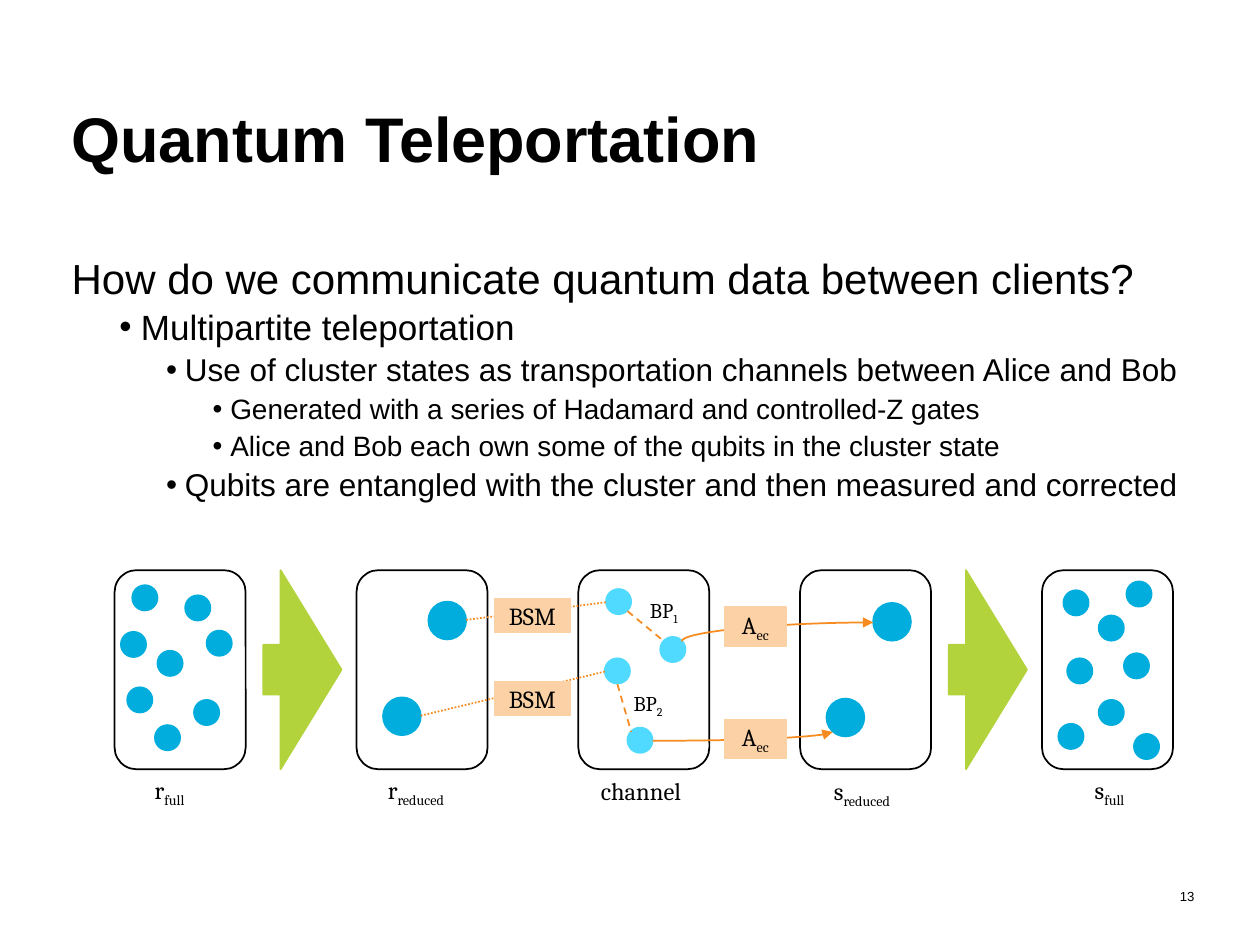
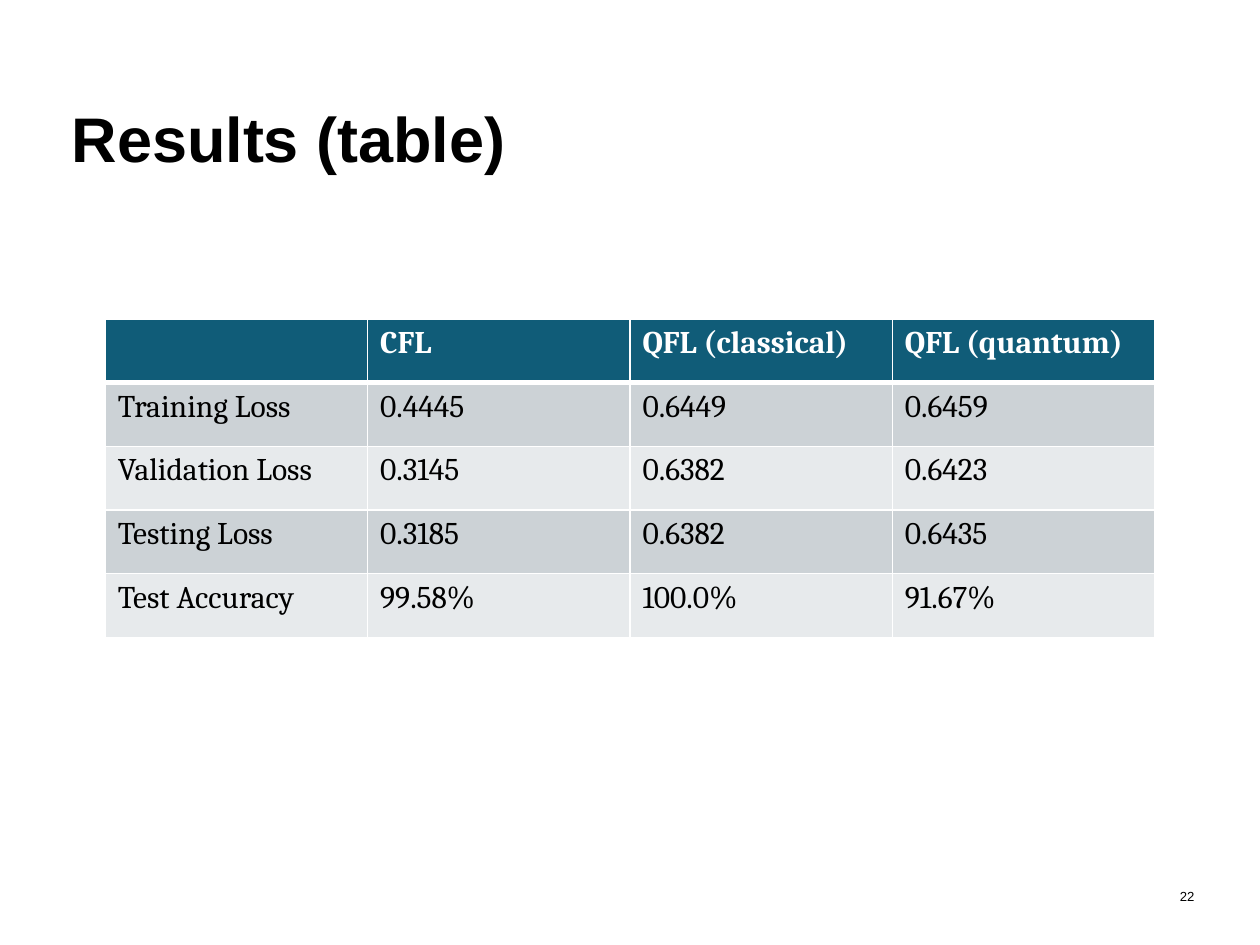
from lxml import etree
from pptx import Presentation
from pptx.dml.color import RGBColor
from pptx.enum.dml import MSO_LINE_DASH_STYLE as Dash
from pptx.enum.shapes import MSO_CONNECTOR as Link, MSO_SHAPE as Shape
from pptx.enum.text import MSO_ANCHOR as Anchor, PP_ALIGN as Align
from pptx.oxml.ns import qn
from pptx.util import Inches, Pt

BLACK = RGBColor(0x00, 0x00, 0x00)
WHITE = RGBColor(0xFF, 0xFF, 0xFF)
BLUE = RGBColor(0x00, 0xAD, 0xDC)
LIGHT_BLUE = RGBColor(0x51, 0xDA, 0xFF)
GREEN = RGBColor(0xB2, 0xD3, 0x3B)
ORANGE = RGBColor(0xF6, 0x8B, 0x1F)
PEACH = RGBColor(0xFB, 0xD1, 0xA5)
TEAL = RGBColor(0x10, 0x5C, 0x78)
ROW_FILLS = (RGBColor(0xCC, 0xD2, 0xD6), RGBColor(0xE7, 0xEA, 0xEC))

SANS, SERIF = "Arial", "Cambria"
WIDTH, HEIGHT = Inches(10), Inches(7.5)
COLUMNS = 100  # the slide is a grid of 100 by 75 square cells

# Teleportation diagram, in grid cells
PANEL_ROW, PANEL_WIDTH, PANEL_HEIGHT = 45.25, 10.4, 15.8
SMALL, LARGE = 2, 3

# Left column, dot colour, dot size, dot offsets inside the panel
PANELS = [
    (9.1, BLUE, SMALL, [(1.4, 1.2), (5.6, 2), (3.4, 6.4), (7.3, 4.8),
                        (0.5, 4.9), (1, 9.3), (3.2, 12.3), (6.3, 10.3)]),
    (28.3, BLUE, LARGE, [(2.1, 10.1), (5.7, 2.5)]),
    (45.9, LIGHT_BLUE, SMALL, [(2.2, 1.5), (6.5, 5.3), (2.1, 7), (3.9, 12.5)]),
    (63.5, BLUE, LARGE, [(2.1, 10.2), (5.8, 2.6)]),
    (82.7, BLUE, SMALL, [(1.7, 1.6), (4.5, 3.6), (2, 7), (1.3, 12.2),
                         (6.7, 0.9), (6.5, 6.6), (4.5, 10.3), (7.3, 13)]),
]

# Column, row, width, text ("_" starts a subscript), size
LABELS = [
    (11.3, 61, 4.6, "r_full", 14),
    (29.8, 61, 7.3, "r_reduced", 14),
    (46.7, 61.1, 8.6, "channel", 14),
    (65.2, 61.1, 7.4, "s_reduced", 14),
    (85.9, 61, 4.7, "s_full", 14),
    (50.6, 46.9, 4.6, "BP_1", 12),
    (49.3, 54.3, 4.6, "BP_2", 12),
]

# Text, size, bullet column, gap from bullet to text (inches)
OUTLINE = [
    ("How do we communicate quantum data between clients?", 24, 0, 0),
    ("Multipartite teleportation", 20, 0.38, 0.17),
    ("Use of cluster states as transportation channels between Alice and Bob",
     18, 0.75, 0.15),
    ("Generated with a series of Hadamard and controlled-Z gates", 16, 1.12, 0.14),
    ("Alice and Bob each own some of the qubits in the cluster state", 16, 1.12, 0.14),
    ("Qubits are entangled with the cluster and then measured and corrected",
     18, 0.75, 0.15),
]

RESULTS = [
    ("", "CFL", "QFL (classical)", "QFL (quantum)"),
    ("Training Loss", "0.4445", "0.6449", "0.6459"),
    ("Validation Loss", "0.3145", "0.6382", "0.6423"),
    ("Testing Loss", "0.3185", "0.6382", "0.6435"),
    ("Test Accuracy", "99.58%", "100.0%", "91.67%"),
]


def cells(*counts):
    """Turn grid cells into slide lengths."""
    return [round(WIDTH * count / COLUMNS) for count in counts]


def add_span(para, text, size, font=SANS, color=BLACK, bold=False):
    span = para.add_run()
    span.text = text
    span.font.size, span.font.name, span.font.bold = Pt(size), font, bold
    span.font.color.rgb = color
    return span


def add_subscripted(para, text, size):
    base, _, subscript = text.partition("_")
    add_span(para, base, size, SERIF)
    if subscript:
        span = add_span(para, subscript, size, SERIF)
        span._r.get_or_add_rPr().set("baseline", "-25000")


def add_box(page, *place, anchor=Anchor.TOP, wrap=True):
    frame = page.shapes.add_textbox(*cells(*place)).text_frame
    frame.word_wrap, frame.vertical_anchor = wrap, anchor
    return frame


def add_figure(page, kind, place, fill=None, line=None):
    figure = page.shapes.add_shape(kind, *cells(*place))
    figure.shadow.inherit = False
    if fill is None:
        figure.fill.background()
    else:
        figure.fill.solid()
        figure.fill.fore_color.rgb = fill
    figure.line.color.rgb = fill if line is None else line
    figure.line.width = Pt(1)
    return figure


# Shared page parts

def add_page(deck, title, number):
    page = deck.slides.add_slide(deck.slide_layouts[6])
    para = add_box(page, 4.7, 4, 90.6, 14.5, anchor=Anchor.MIDDLE).paragraphs[0]
    para.line_spacing = 0.9
    add_span(para, title, 36, bold=True)

    frame = add_box(page, 91.8, 69.1, 3.5, 4, anchor=Anchor.MIDDLE)
    frame.margin_left = frame.margin_top = frame.margin_bottom = 0
    frame.margin_right = Inches(0.05)
    frame.paragraphs[0].alignment = Align.RIGHT
    add_span(frame.paragraphs[0], number, 7.5)
    return page


def add_outline(page):
    frame = add_box(page, 4.7, 20, 90.6, 46)
    for index, (text, size, bullet_at, gap) in enumerate(OUTLINE):
        para = frame.add_paragraph() if index else frame.paragraphs[0]
        para.line_spacing = 0.9
        if index:
            para.space_before = Pt(3.8)
            properties = para._p.get_or_add_pPr()
            properties.set("marL", str(Inches(bullet_at + gap)))
            properties.set("indent", str(-Inches(gap)))
            etree.SubElement(properties, qn("a:buFont")).set("typeface", SANS)
            etree.SubElement(properties, qn("a:buChar")).set("char", "•")
        add_span(para, text, size)


# Diagram parts

def add_panel(page, column, color, size, dots):
    add_figure(page, Shape.ROUNDED_RECTANGLE,
               (column, PANEL_ROW, PANEL_WIDTH, PANEL_HEIGHT), line=BLACK)
    for across, down in dots:
        add_figure(page, Shape.OVAL,
                   (column + across, PANEL_ROW + down, size, size), color)


def add_block_arrow(page, column):
    arrow = add_figure(page, Shape.RIGHT_ARROW,
                       (column, PANEL_ROW, 6.2, PANEL_HEIGHT), GREEN)
    arrow.adjustments[0], arrow.adjustments[1] = 0.25, 0.78


def add_operation(page, column, row, width, height, text):
    box = add_figure(page, Shape.RECTANGLE, (column, row, width, height), PEACH)
    box.text_frame.vertical_anchor = Anchor.MIDDLE
    para = box.text_frame.paragraphs[0]
    para.alignment = Align.CENTER
    add_subscripted(para, text, 14)


def add_link(page, start, end, kind=Link.STRAIGHT, dash=None):
    link = page.shapes.add_connector(kind, *cells(*start, *end))
    link.line.color.rgb, link.line.width = ORANGE, Pt(1)
    if dash:
        link.line.dash_style = dash
    etree.SubElement(link._element.spPr, qn("a:effectLst"))
    return link


def add_curved_arrow(page, start, end, upward_first=False):
    """Quarter curve; one that leaves upward is a quarter turn of the other."""
    if upward_first:
        middle = [(a + b) / 2 for a, b in zip(start, end)]
        half_run, half_rise = (end[0] - start[0]) / 2, (start[1] - end[1]) / 2
        start = middle[0] + half_rise, middle[1] + half_run
        end = middle[0] - half_rise, middle[1] - half_run
    properties = add_link(page, start, end, Link.CURVE)._element.spPr
    properties.find(qn("a:prstGeom")).set("prst", "curvedConnector2")
    if upward_first:
        properties.find(qn("a:xfrm")).set("rot", str(90 * 60000))
    etree.SubElement(properties.find(qn("a:ln")), qn("a:tailEnd")).set("type", "triangle")


def add_diagram(page):
    for panel in PANELS:
        add_panel(page, *panel)
    for column in (20.9, 75.3):
        add_block_arrow(page, column)

    # Bell pairs and measurements
    add_link(page, (49.8, 48.5), (52.7, 50.9), dash=Dash.DASH)
    add_link(page, (49, 54.3), (50.1, 58.1), dash=Dash.DASH)
    add_link(page, (37, 49.2), (48.1, 47.8), dash=Dash.ROUND_DOT)
    add_link(page, (33.4, 56.8), (48, 53.3), dash=Dash.ROUND_DOT)
    for row in (47.5, 54.1):
        add_operation(page, 39.25, row, 6, 2.7, "BSM")

    # Corrections
    add_curved_arrow(page, (54.1, 50.9), (69.3, 49.4), upward_first=True)
    add_curved_arrow(page, (51.8, 58.8), (66.1, 58.1))
    for row in (48.2, 57.1):
        add_operation(page, 57.5, row, 4.9, 3.1, "A_ec")

    for column, row, width, text, size in LABELS:
        frame = add_box(page, column, row, width, 3.4, wrap=False)
        add_subscripted(frame.paragraphs[0], text, size)


# Results table

def add_border(cell, side, width):
    line = etree.SubElement(cell._tc.get_or_add_tcPr(), qn(f"a:ln{side}"))
    line.set("w", str(Pt(width)))
    fill = etree.SubElement(line, qn("a:solidFill"))
    etree.SubElement(fill, qn("a:srgbClr")).set("val", str(WHITE))


def add_results(page):
    place = cells(8.35, 25.3, 83.3, 25.3)
    table = page.shapes.add_table(len(RESULTS), len(RESULTS[0]), *place).table
    for row, values in enumerate(RESULTS):
        header = row == 0
        for column, value in enumerate(values):
            cell = table.cell(row, column)
            for side in "LRTB":
                thick = (row, side) in ((0, "B"), (1, "T"))
                add_border(cell, side, 3 if thick else 1)
            cell.fill.solid()
            cell.fill.fore_color.rgb = TEAL if header else ROW_FILLS[(row - 1) % 2]
            if value:
                add_span(cell.text_frame.paragraphs[0], value, 18, SERIF,
                         WHITE if header else BLACK, header)


def main():
    deck = Presentation()
    deck.slide_width, deck.slide_height = WIDTH, HEIGHT

    page = add_page(deck, "Quantum Teleportation", "13")
    add_outline(page)
    add_diagram(page)

    add_results(add_page(deck, "Results (table)", "22"))
    deck.save("out.pptx")


if __name__ == "__main__":
    main()
